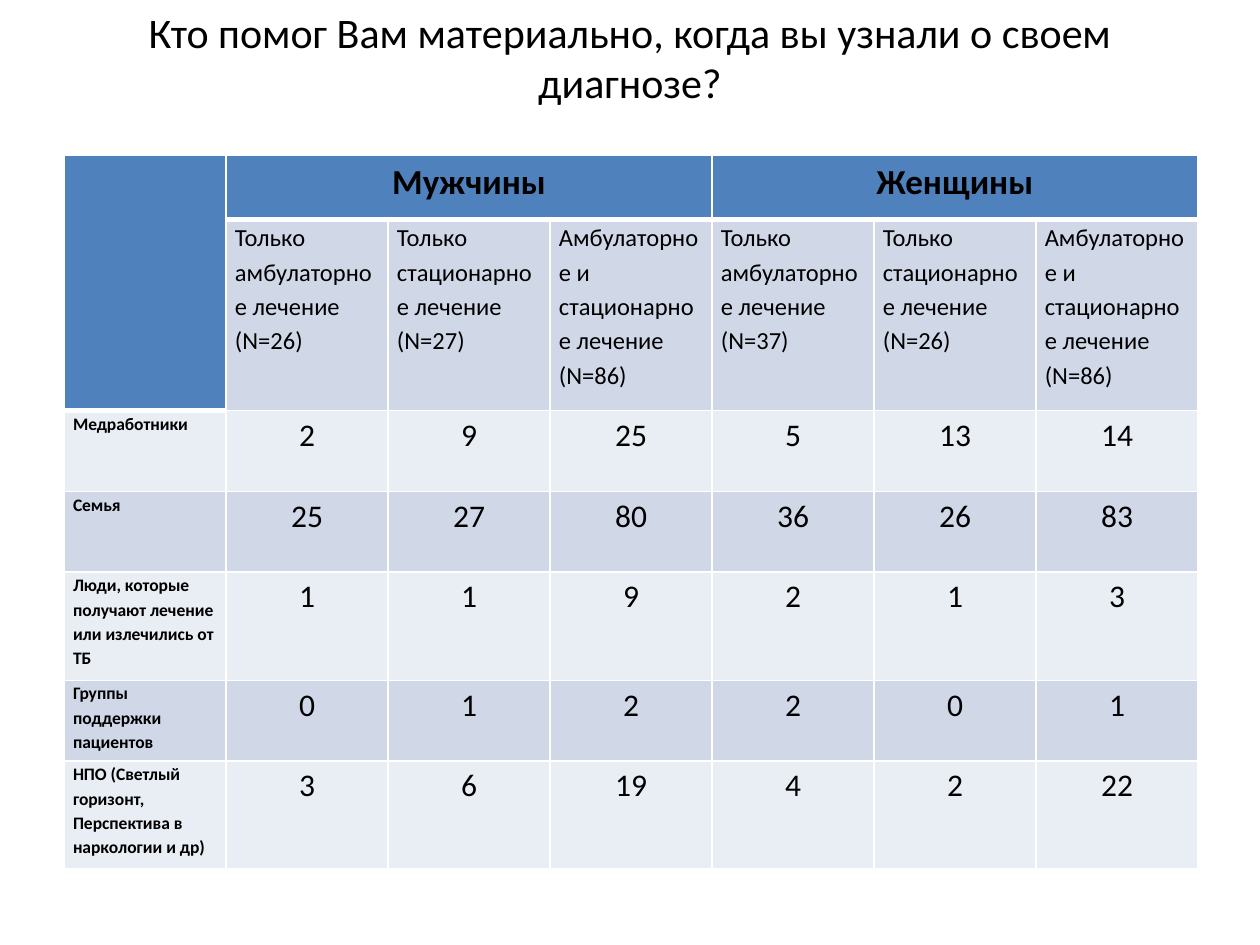
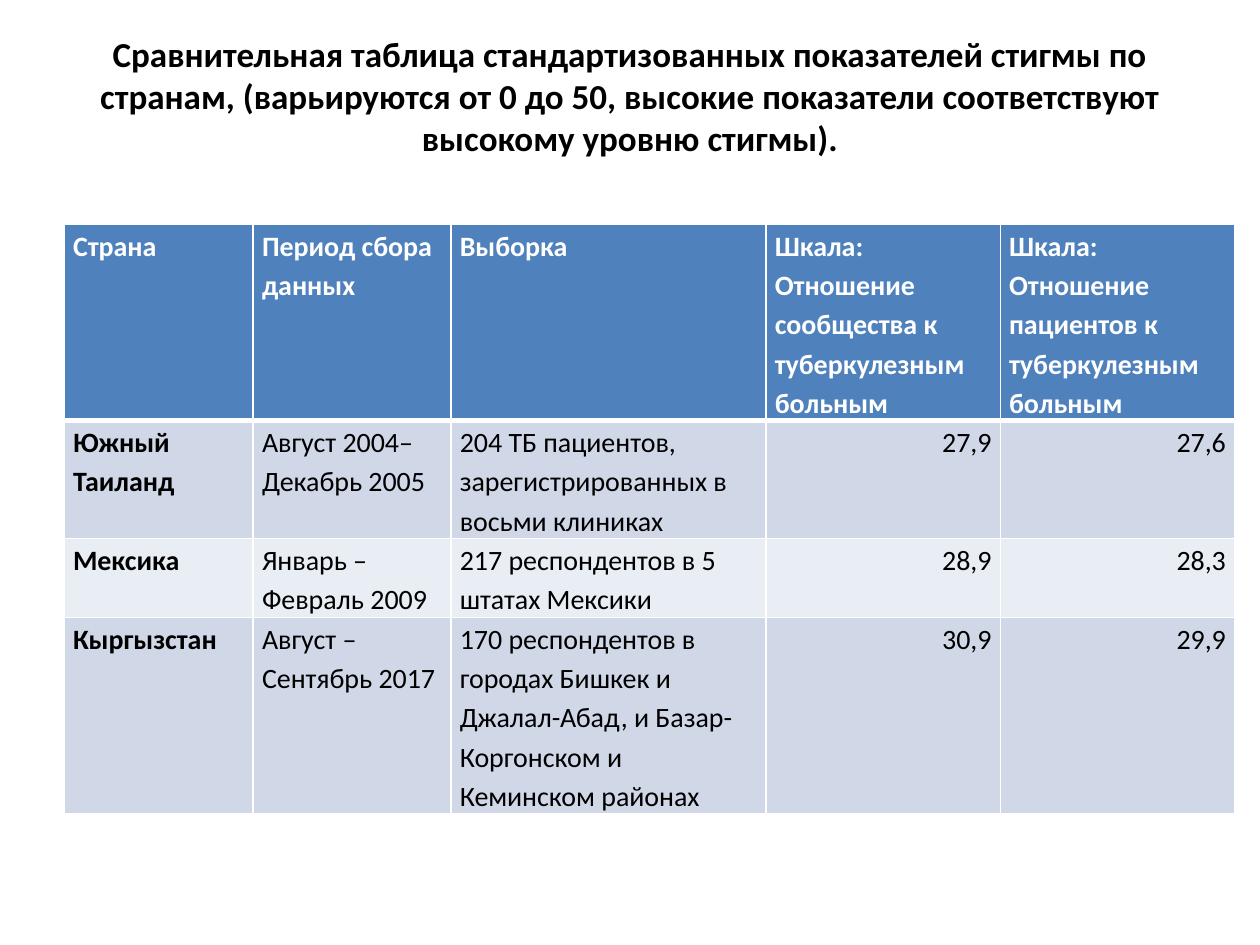
import dataclasses

import pptx
import pptx.dml.color
import pptx.enum.text
import pptx.oxml.ns
import pptx.util
from lxml import etree

ALIGN = pptx.enum.text.PP_ALIGN
GRID_COLUMNS, GRID_ROWS = 100, 75


@dataclasses.dataclass(frozen=True)
class Theme:
    """Colours, font and type sizes shared by the slides."""
    font: str = "Calibri"
    ink: str = "000000"
    paper: str = "FFFFFF"
    header: str = "4F81BD"
    bands: tuple = ("D0D8E8", "E9EDF4")
    title: int = 24
    group: int = 20
    number: int = 18
    body: int = 16
    subhead: int = 14
    label: int = 10
    line: float = 1
    header_line: float = 3
    spacing: float = 1.15
    cell_inset: float = 0.07


@dataclasses.dataclass(frozen=True)
class Style:
    """Look of one piece of text."""
    size: int
    bold: bool = False
    color: str = Theme.ink
    align: int = ALIGN.LEFT


@dataclasses.dataclass(frozen=True)
class Box:
    """Area in grid columns and rows of the slide."""
    left: float
    top: float
    width: float
    height: float

    def place(self, presentation):
        """Return left, top, width and height as slide lengths."""
        column = presentation.slide_width / GRID_COLUMNS
        row = presentation.slide_height / GRID_ROWS
        return [round(value) for value in (self.left * column, self.top * row,
                                           self.width * column, self.height * row)]


THEME = Theme()
GROUP = Style(THEME.group, bold=True, align=ALIGN.CENTER)
SUBHEAD = Style(THEME.subhead)
LABEL = Style(THEME.label, bold=True)
COUNT = Style(THEME.number, align=ALIGN.CENTER)
HEADING = Style(THEME.body, bold=True, color=THEME.paper)
COUNTRY = Style(THEME.body, bold=True)
DETAIL = Style(THEME.body)
SCORE = Style(THEME.body, align=ALIGN.RIGHT)

HELP_TITLE = "Кто помог Вам материально, когда вы узнали о своем диагнозе?"
SEXES = ("Мужчины", "Женщины")
TREATMENTS = ("Только амбулаторное лечение", "Только стационарное лечение",
              "Амбулаторное и стационарное лечение")
SAMPLE_SIZES = (26, 27, 86, 37, 26, 86)
HELPERS = (
    ("Медработники", 2, 9, 25, 5, 13, 14),
    ("Семья", 25, 27, 80, 36, 26, 83),
    ("Люди, которые получают лечение или излечились от ТБ", 1, 1, 9, 2, 1, 3),
    ("Группы поддержки пациентов", 0, 1, 2, 2, 0, 1),
    ("НПО (Светлый горизонт, Перспектива в наркологии и др)", 3, 6, 19, 4, 2, 22),
)

STIGMA_TITLE = ("Сравнительная таблица стандартизованных показателей стигмы по странам, "
                "(варьируются от 0 до 50, высокие показатели соответствуют "
                "высокому уровню стигмы).")
STIGMA_HEADINGS = ("Страна", "Период сбора данных", "Выборка",
                   "Шкала: Отношение сообщества к туберкулезным больным",
                   "Шкала:\nОтношение пациентов к туберкулезным больным")
COUNTRIES = (
    ("Южный Таиланд", "Август 2004–Декабрь 2005",
     "204 ТБ пациентов, зарегистрированных в восьми клиниках", "27,9", "27,6"),
    ("Мексика", "Январь – Февраль 2009",
     "217 респондентов в 5 штатах Мексики", "28,9", "28,3"),
    ("Кыргызстан", "Август – Сентябрь 2017",
     "170 респондентов в городах Бишкек и Джалал-Абад, и Базар-Коргонском "
     "и Кеминском районах", "30,9", "29,9"),
)


def write(text_frame, text, style, spacing=None):
    """Set the text of a frame and format its paragraphs and runs."""
    text_frame.text = text
    for paragraph in text_frame.paragraphs:
        paragraph.alignment = style.align
        paragraph.line_spacing = spacing
        for run in paragraph.runs:
            run.font.name = THEME.font
            run.font.size = pptx.util.Pt(style.size)
            run.font.bold = style.bold
            run.font.color.rgb = pptx.dml.color.RGBColor.from_string(style.color)


def add_title(presentation, slide, box, text, style, bottom_inset=0.05):
    """Add a centred title in the box."""
    text_frame = slide.shapes.add_textbox(*box.place(presentation)).text_frame
    text_frame.word_wrap = True
    text_frame.vertical_anchor = pptx.enum.text.MSO_ANCHOR.MIDDLE
    text_frame.margin_bottom = pptx.util.Inches(bottom_inset)
    write(text_frame, text, style)


def add_borders(cell, bottom_width):
    """Draw white lines on the four sides of a cell."""
    properties = cell._tc.get_or_add_tcPr()
    qualify = pptx.oxml.ns.qn
    widths = {"L": THEME.line, "R": THEME.line, "T": THEME.line, "B": bottom_width}
    for side, width in widths.items():
        line = etree.SubElement(properties, qualify(f"a:ln{side}"),
                                w=str(pptx.util.Pt(width)))
        fill = etree.SubElement(line, qualify("a:solidFill"))
        etree.SubElement(fill, qualify("a:srgbClr"), val=THEME.paper)


def format_cell(cell, fill, bottom_width):
    """Set the borders, fill and insets of a cell."""
    add_borders(cell, bottom_width)
    cell.fill.solid()
    cell.fill.fore_color.rgb = pptx.dml.color.RGBColor.from_string(fill)
    cell.margin_left = cell.margin_right = pptx.util.Inches(THEME.cell_inset)
    cell.margin_top = cell.margin_bottom = 0


def share_out(lines, total, weights):
    """Divide a length among table columns or rows by weight."""
    for line, weight in zip(lines, weights):
        yield line, round(total * weight / sum(weights))


def add_grid(presentation, slide, box, column_weights, row_weights, rows, merges=()):
    """Add a banded table from rows of (text, style) pairs, with merged header areas."""
    place = box.place(presentation)
    table = slide.shapes.add_table(len(rows), len(column_weights), *place).table
    table.first_row = table.horz_banding = False
    for column, width in share_out(table.columns, place[2], column_weights):
        column.width = width
    for row, height in share_out(table.rows, place[3], row_weights):
        row.height = height
    header_cells = {(0, column) for column in range(len(column_weights))}
    for top, left, bottom, right in merges:
        table.cell(top, left).merge(table.cell(bottom, right))
        header_cells |= {(row, column) for row in range(top, bottom + 1)
                         for column in range(left, right + 1)}
    for row_index, row in enumerate(rows):
        for column_index, (text, style) in enumerate(row):
            cell = table.cell(row_index, column_index)
            if (row_index, column_index) in header_cells:
                format_cell(cell, THEME.header, THEME.header_line)
            else:
                format_cell(cell, THEME.bands[(row_index - 1) % 2], THEME.line)
            if text:
                write(cell.text_frame, text, style, THEME.spacing)


def add_blank_slide(presentation):
    """Add a slide on the blank layout."""
    return presentation.slides.add_slide(presentation.slide_layouts[6])


def build_help_slide(presentation):
    """Build the table of who helped, by sex and treatment."""
    slide = add_blank_slide(presentation)
    add_title(presentation, slide, Box(5, 3, 90, 3), HELP_TITLE,
              Style(THEME.title, align=ALIGN.CENTER))
    span = len(TREATMENTS)
    groups = [("", GROUP)]
    for sex in SEXES:
        groups += [(sex, GROUP)] + [("", GROUP)] * (span - 1)
    subheads = [("", SUBHEAD)] + [
        (f"{treatment} (N={size})", SUBHEAD)
        for treatment, size in zip(TREATMENTS * len(SEXES), SAMPLE_SIZES)]
    counts = [[(label, LABEL)] + [(str(value), COUNT) for value in values]
              for label, *values in HELPERS]
    merges = [(0, 0, 1, 0)] + [(0, 1 + index * span, 0, (index + 1) * span)
                               for index in range(len(SEXES))]
    add_grid(presentation, slide, Box(5.1, 12.3, 90, 56.7), [1] * len(groups),
             (5.1, 15.2, 6.4, 6.4, 8.6, 6.4, 8.6), [groups, subheads, *counts], merges)


def build_stigma_slide(presentation):
    """Build the comparison of stigma scores by country."""
    slide = add_blank_slide(presentation)
    add_title(presentation, slide, Box(5, 3, 90, 12.5), STIGMA_TITLE, GROUP,
              bottom_inset=0.39)
    styles = (COUNTRY, DETAIL, DETAIL, SCORE, SCORE)
    rows = [[(heading, HEADING) for heading in STIGMA_HEADINGS]]
    rows += [list(zip(country, styles)) for country in COUNTRIES]
    add_grid(presentation, slide, Box(5.1, 17.8, 92.9, 46.8),
             (15, 15.7, 25, 18.6, 18.6), (5, 3, 2, 5), rows)


def main():
    """Build and save the presentation."""
    presentation = pptx.Presentation()
    presentation.slide_width = pptx.util.Inches(10)
    presentation.slide_height = pptx.util.Inches(7.5)
    build_help_slide(presentation)
    build_stigma_slide(presentation)
    presentation.save("out.pptx")


if __name__ == "__main__":
    main()
